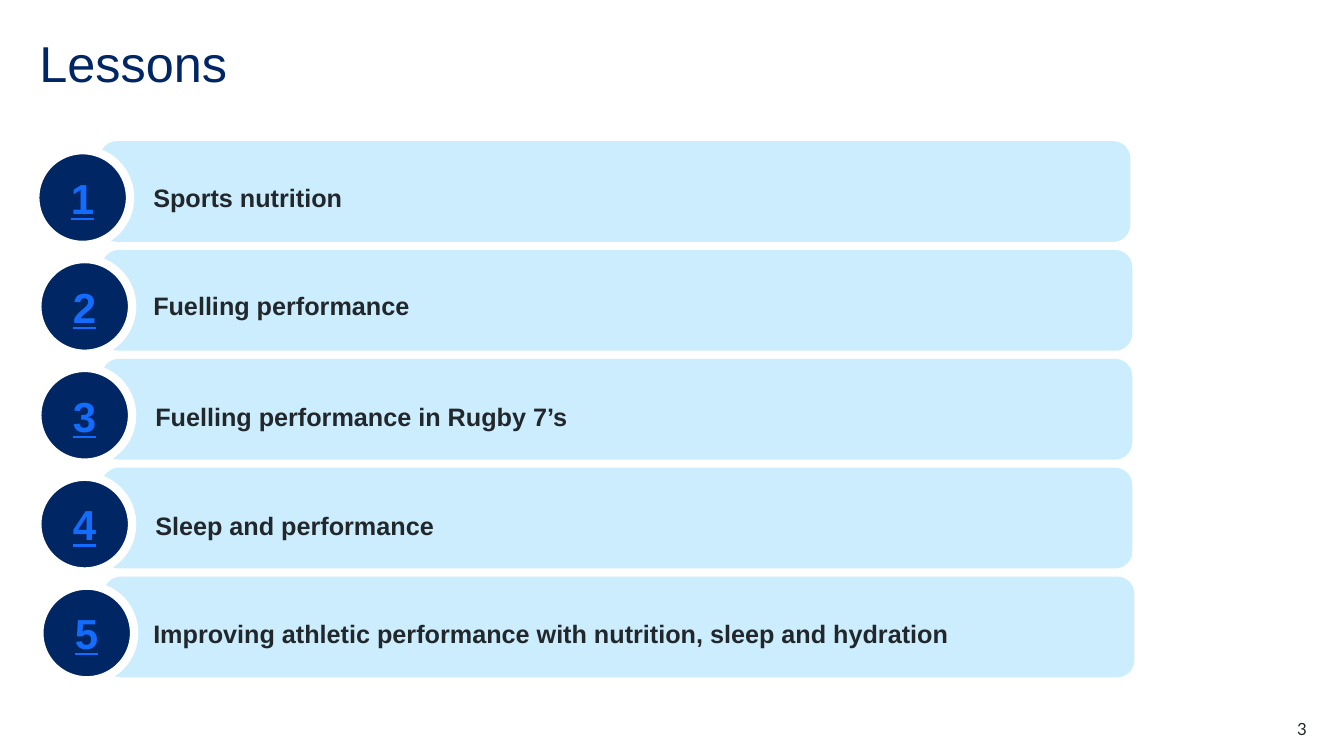
from dataclasses import dataclass

from pptx import Presentation
from pptx.dml.color import RGBColor
from pptx.enum.shapes import MSO_SHAPE
from pptx.enum.text import MSO_ANCHOR, MSO_AUTO_SIZE, PP_ALIGN
from pptx.util import Inches, Pt


@dataclass(frozen=True)
class Theme:
    navy: str = "002664"
    sky: str = "CBEDFD"
    link_blue: str = "146CFD"
    ink: str = "22272B"
    white: str = "FFFFFF"
    font: str = "Arial"
    number_font: str = "Lato"
    title_size: int = 36
    badge_size: int = 30
    label_size: int = 18
    page_number_size: int = 12


THEME = Theme()

# Lesson name, left of its row, left and top of its label
LESSONS = [
    ("Sports nutrition", 0.35, 1.52, 1.66),
    ("Fuelling performance", 0.37, 1.52, 2.73),
    ("Fuelling performance in Rugby 7’s", 0.37, 1.54, 3.83),
    ("Sleep and performance", 0.37, 1.54, 4.91),
    ("Improving athletic performance with nutrition, sleep and hydration", 0.39, 1.52, 5.98),
]
FIRST_ROW_TOP = 1.4
ROW_PITCH = 1.08


def inches(box):
    return [Inches(value) for value in box]


def write(frame, text, size, color, font=THEME.font, align=PP_ALIGN.LEFT,
          anchor=MSO_ANCHOR.TOP, spacing=None, bold=False, underline=False, inset=0):
    frame.word_wrap = True
    frame.vertical_anchor = anchor
    frame.margin_left = frame.margin_right = Inches(inset)
    frame.margin_top = frame.margin_bottom = Inches(inset / 2)
    para = frame.paragraphs[0]
    para.alignment = align
    para.line_spacing = spacing
    span = para.add_run()
    span.text = text
    span.font.name = font
    span.font.size = Pt(size)
    span.font.bold = bold
    span.font.underline = underline
    span.font.color.rgb = RGBColor.from_string(color)


def add_filled(group, kind, box, color):
    shape = group.shapes.add_shape(kind, *inches(box))
    shape.shadow.inherit = False
    shape.fill.solid()
    shape.fill.fore_color.rgb = RGBColor.from_string(color)
    shape.line.fill.background()
    return shape


def add_title(page, box, text):
    title = page.shapes.title
    title.left, title.top, title.width, title.height = inches(box)
    title.text_frame.auto_size = MSO_AUTO_SIZE.NONE
    write(title.text_frame, text, THEME.title_size, THEME.navy, spacing=0.9)


def add_lesson(page, left, top, number, name, label_left, label_top):
    group = page.shapes.add_group_shape()

    # Bar
    bar = add_filled(group, MSO_SHAPE.ROUNDED_RECTANGLE, (left + 0.64, top, 10.22, 1), THEME.sky)
    bar.adjustments[0] = 0.17

    # Numbered badge
    badge = add_filled(group, MSO_SHAPE.OVAL, (left, top + 0.09, 0.94, 0.94), THEME.navy)
    badge.line.color.rgb = RGBColor.from_string(THEME.white)
    badge.line.width = Pt(6)
    write(badge.text_frame, str(number), THEME.badge_size, THEME.link_blue, align=PP_ALIGN.CENTER,
          anchor=MSO_ANCHOR.MIDDLE, bold=True, underline=True, inset=0.1)

    # Label
    label = add_filled(group, MSO_SHAPE.RECTANGLE, (label_left, label_top, 8.29, 0.4), THEME.sky)
    label.text_frame.auto_size = MSO_AUTO_SIZE.SHAPE_TO_FIT_TEXT
    write(label.text_frame, name, THEME.label_size, THEME.ink, spacing=1.5, bold=True)


def add_page_number(page, box, number):
    footer = page.shapes.add_textbox(*inches(box))
    write(footer.text_frame, str(number), THEME.page_number_size, THEME.ink,
          font=THEME.number_font, align=PP_ALIGN.RIGHT)


def main():
    deck = Presentation()
    deck.slide_width, deck.slide_height = Inches(13.33), Inches(7.5)
    title_only = deck.slide_layouts[5]
    page = deck.slides.add_slide(title_only)

    add_title(page, (0.39, 0.39, 12.56, 0.6), "Lessons")
    for index, (name, left, label_left, label_top) in enumerate(LESSONS):
        top = FIRST_ROW_TOP + index * ROW_PITCH
        add_lesson(page, left, top, index + 1, name, label_left, label_top)
    add_page_number(page, (12.17, 7.13, 0.79, 0.2), 3)

    deck.save("out.pptx")


if __name__ == "__main__":
    main()
